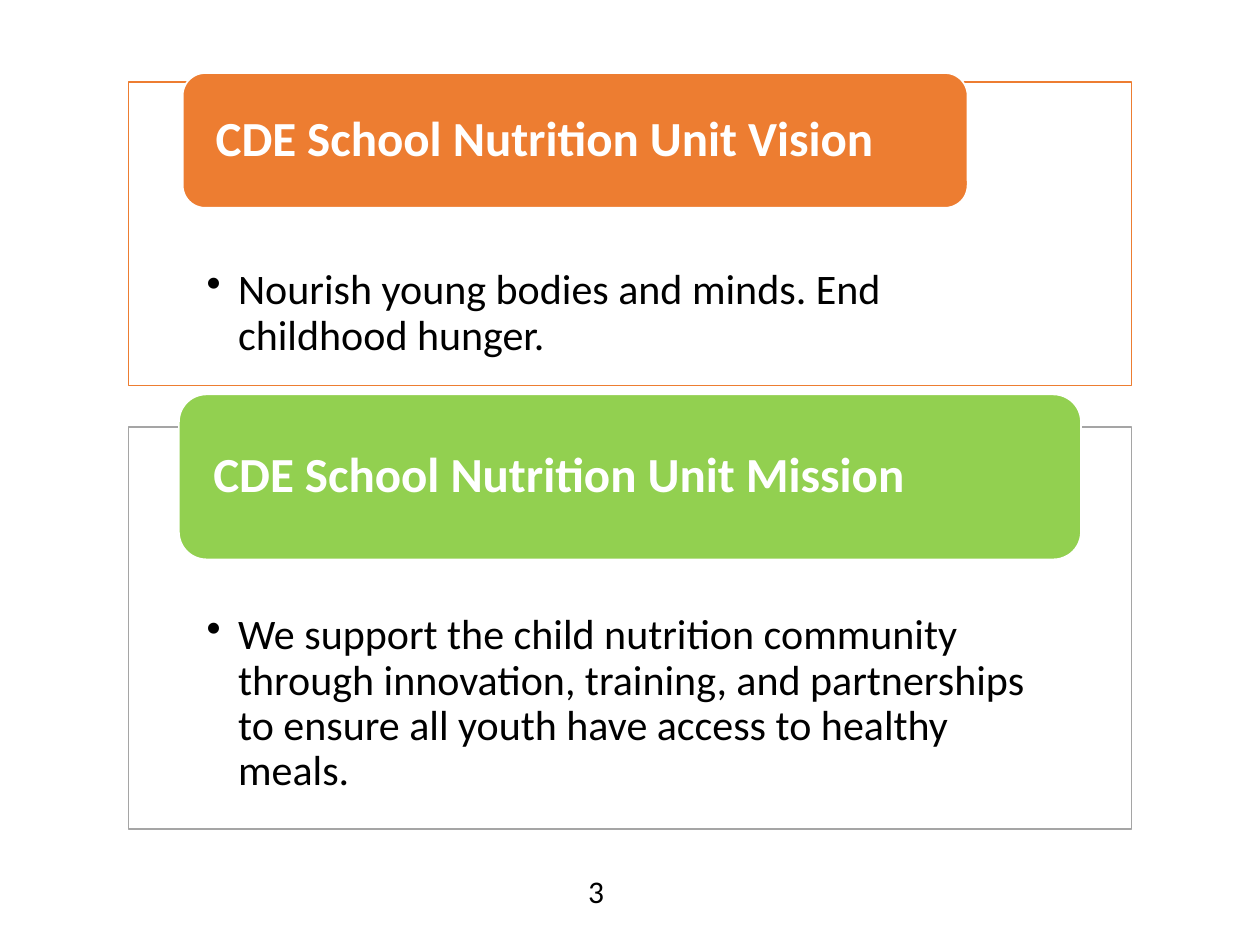
from lxml import etree
from pptx import Presentation
from pptx.dml.color import RGBColor
from pptx.enum import shapes, text
from pptx.oxml import ns
from pptx.util import Inches, Pt

# Content: heading, statement, accents and (left, top, width, height) in inches
SECTIONS = [
    dict(heading="CDE School Nutrition Unit Vision",
         statement="Nourish young bodies and minds. End childhood hunger.",
         border="ED7D31", banner_fill="ED7D31",
         panel=(1.02, 0.65, 7.96, 2.41), banner=(1.45, 0.58, 6.23, 1.07)),
    dict(heading="CDE School Nutrition Unit Mission",
         statement="We support the child nutrition community through innovation, "
                   "training, and partnerships to ensure all youth have access "
                   "to healthy meals.",
         border="A5A5A5", banner_fill="92D050",
         panel=(1.02, 3.39, 7.96, 3.19), banner=(1.42, 3.13, 7.16, 1.31)),
]
PAGE_NUMBER = "3"
PAGE_NUMBER_BOX = (4.57, 6.87, 0.33, 0.4)

THEME = dict(font="Calibri", white="FFFFFF", black="000000",
             heading=28, statement=24, page=18, line=1)
PANEL_INSETS = (0.62, 1.48, 0.62, 0.19)
BANNER_INSETS = (0.21, 0, 0.21, 0)
PAGE_INSETS = (0.1, 0.05, 0.1, 0.05)
BULLET_INDENT = 0.25


def add_box(slide, preset, box, fill, border):
    shape = slide.shapes.add_shape(preset, *map(Inches, box))
    shape.shadow.inherit = False
    shape.fill.solid()
    shape.fill.fore_color.rgb = RGBColor.from_string(fill)
    shape.line.color.rgb = RGBColor.from_string(border)
    shape.line.width = Pt(THEME["line"])
    return shape


def write(shape, words, *, size, color, insets, bold=False, bullet=False,
          anchor=text.MSO_ANCHOR.TOP, spacing=1.0):
    frame = shape.text_frame
    frame.word_wrap = True
    frame.vertical_anchor = anchor
    (frame.margin_left, frame.margin_top,
     frame.margin_right, frame.margin_bottom) = map(Inches, insets)
    paragraph = frame.paragraphs[0]
    paragraph.alignment = text.PP_ALIGN.LEFT
    paragraph.line_spacing = spacing
    if bullet:
        paragraph.level = 1
        properties = paragraph._p.get_or_add_pPr()
        properties.set("marL", str(Inches(BULLET_INDENT)))
        properties.set("indent", str(-Inches(BULLET_INDENT)))
        etree.SubElement(properties, ns.qn("a:buChar"), char="•")
    run = paragraph.add_run()
    run.text = words
    run.font.name = THEME["font"]
    run.font.size = Pt(size)
    run.font.bold = bold
    run.font.color.rgb = RGBColor.from_string(color)


def main():
    deck = Presentation()
    deck.slide_width, deck.slide_height = Inches(10), Inches(7.5)
    slide = deck.slides.add_slide(deck.slide_layouts[6])

    # Each section: bordered panel with its statement, then the banner on top
    for section in SECTIONS:
        panel = add_box(slide, shapes.MSO_SHAPE.RECTANGLE, section["panel"],
                        THEME["white"], section["border"])
        write(panel, section["statement"], size=THEME["statement"],
              color=THEME["black"], insets=PANEL_INSETS, bullet=True, spacing=0.9)
        banner = add_box(slide, shapes.MSO_SHAPE.ROUNDED_RECTANGLE,
                         section["banner"], section["banner_fill"], THEME["white"])
        write(banner, section["heading"], size=THEME["heading"],
              color=THEME["white"], insets=BANNER_INSETS, bold=True,
              anchor=text.MSO_ANCHOR.MIDDLE, spacing=0.9)

    # Page number
    page = slide.shapes.add_textbox(*map(Inches, PAGE_NUMBER_BOX))
    write(page, PAGE_NUMBER, size=THEME["page"], color=THEME["black"],
          insets=PAGE_INSETS)

    deck.save("out.pptx")


if __name__ == "__main__":
    main()
